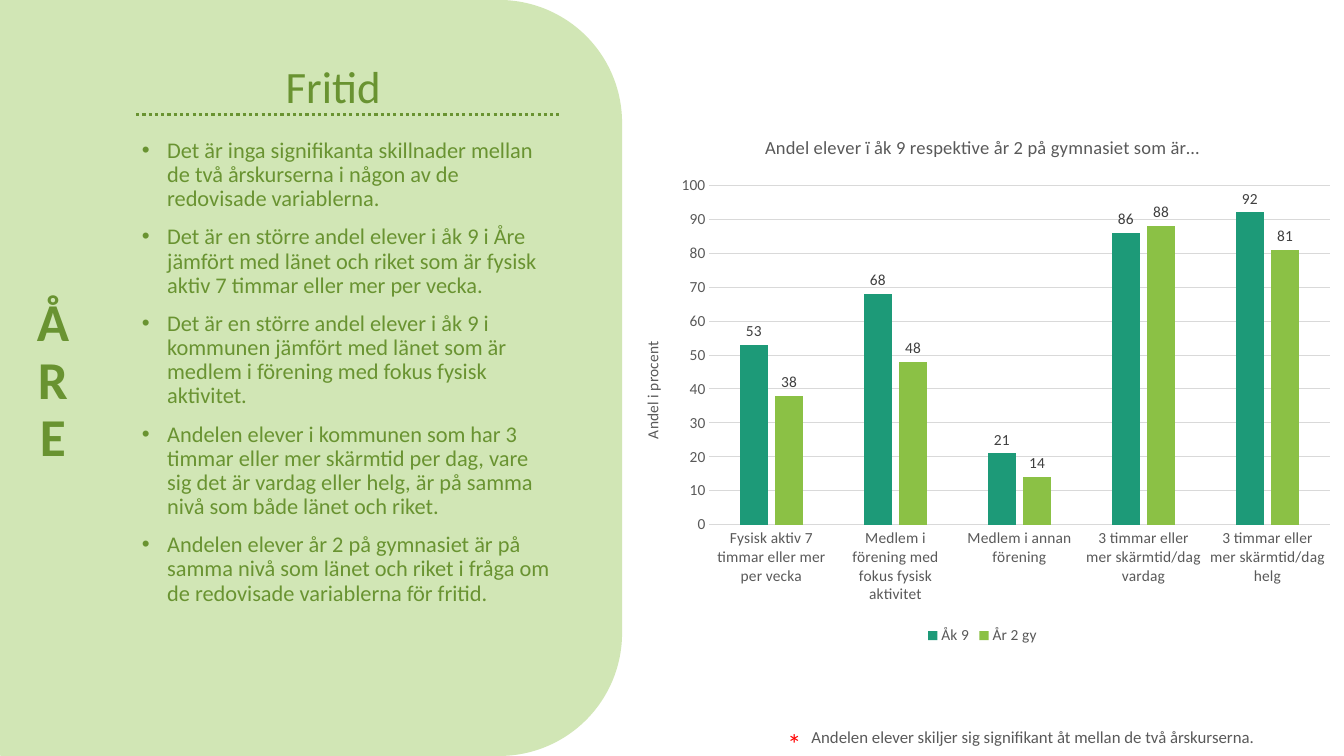
from lxml import etree
from pptx import Presentation
from pptx.chart.data import CategoryChartData
from pptx.dml.color import RGBColor
from pptx.enum.chart import XL_CHART_TYPE as ChartType, XL_LABEL_POSITION as LabelPosition
from pptx.enum.chart import XL_LEGEND_POSITION as LegendPosition, XL_TICK_MARK as TickMark
from pptx.enum.dml import MSO_LINE as LineDash
from pptx.enum.shapes import MSO_CONNECTOR as Connector, MSO_SHAPE as ShapeType
from pptx.enum.text import MSO_ANCHOR as Anchor, PP_ALIGN as Align
from pptx.oxml.ns import qn
from pptx.util import Inches, Pt

FONT = "Calibri"
PALE_GREEN = "D1E6B5"
DARK_GREEN = "699331"
GREY = "595959"
LIGHT_GREY = "D9D9D9"

FINDINGS = [
    "Det är inga signifikanta skillnader mellan de två årskurserna i någon av de redovisade variablerna.",
    "Det är en större andel elever i åk 9 i Åre jämfört med länet och riket som är fysisk aktiv 7 timmar "
    "eller mer per vecka.",
    "Det är en större andel elever i åk 9 i kommunen jämfört med länet som är medlem i förening med fokus "
    "fysisk aktivitet.",
    "Andelen elever i kommunen som har 3 timmar eller mer skärmtid per dag, vare sig det är vardag eller "
    "helg, är på samma nivå som både länet och riket.",
    "Andelen elever år 2 på gymnasiet är på samma nivå som länet och riket i fråga om de redovisade "
    "variablerna för fritid.",
]
ACTIVITIES = [
    "Fysisk aktiv 7 timmar eller mer per vecka",
    "Medlem i förening med fokus fysisk aktivitet",
    "Medlem i annan förening",
    "3 timmar eller mer skärmtid/dag vardag",
    "3 timmar eller mer skärmtid/dag helg",
]
SERIES = [
    ("Åk 9", (53, 68, 21, 86, 92), "1D9A78"),
    ("År 2 gy", (38, 48, 14, 88, 81), "8BC145"),
]


def color(hex_string):
    return RGBColor.from_string(hex_string)


def style_font(font, size, hex_string, bold=False):
    font.name = FONT
    font.size = Pt(size)
    font.bold = bold
    font.color.rgb = color(hex_string)


def add_panel(slide, shape_type, left, top, width, height):
    panel = slide.shapes.add_shape(shape_type, Inches(left), Inches(top), Inches(width), Inches(height))
    panel.shadow.inherit = False
    panel.fill.solid()
    panel.fill.fore_color.rgb = color(PALE_GREEN)
    panel.line.fill.background()
    return panel


def add_text(slide, text, left, top, width, height, size, hex_string,
             align=Align.LEFT, anchor=Anchor.TOP, bold=False, line_spacing=1.0):
    box = slide.shapes.add_textbox(Inches(left), Inches(top), Inches(width), Inches(height))
    frame = box.text_frame
    frame.word_wrap = True
    frame.vertical_anchor = anchor
    frame.text = text
    paragraph = frame.paragraphs[0]
    paragraph.alignment = align
    paragraph.line_spacing = line_spacing
    style_font(paragraph.runs[0].font, size, hex_string, bold)
    return box


def stack_letters(box):
    """Set the text upright, one letter below the other."""
    box.text_frame._txBody.bodyPr.set("vert", "wordArtVert")


def add_bullet(paragraph):
    properties = paragraph._p.get_or_add_pPr()
    properties.set("marL", str(Inches(0.25)))
    properties.set("indent", str(Inches(-0.25)))
    etree.SubElement(properties, qn("a:buFont")).set("typeface", "Arial")
    etree.SubElement(properties, qn("a:buChar")).set("char", "•")


def fill_bullets(shape, texts):
    frame = shape.text_frame
    frame.word_wrap = True
    frame.vertical_anchor = Anchor.TOP
    frame.text = "\n".join(texts)
    for paragraph in frame.paragraphs:
        paragraph.alignment = Align.LEFT
        paragraph.line_spacing = 0.9
        paragraph.space_before = Pt(10)
        add_bullet(paragraph)
        style_font(paragraph.runs[0].font, 16, DARK_GREEN)


def add_dotted_rule(slide, left, right, y):
    rule = slide.shapes.add_connector(Connector.STRAIGHT, Inches(left), Inches(y), Inches(right), Inches(y))
    rule.line.color.rgb = color(DARK_GREEN)
    rule.line.width = Pt(2.25)
    rule.line.dash_style = LineDash.ROUND_DOT
    etree.SubElement(rule._element.spPr, qn("a:effectLst"))


def set_title(titled, text, size):
    """Title a chart or an axis."""
    frame = (titled.chart_title if hasattr(titled, "chart_title") else titled.axis_title).text_frame
    frame.text = text
    style_font(frame.paragraphs[0].runs[0].font, size, GREY)


def style_axes(chart):
    for axis in (chart.category_axis, chart.value_axis):
        axis.major_tick_mark = axis.minor_tick_mark = TickMark.NONE
        style_font(axis.tick_labels.font, 11, GREY)
    category_line = chart.category_axis.format.line
    value_axis = chart.value_axis
    value_axis.minimum_scale, value_axis.maximum_scale, value_axis.major_unit = 0, 100, 10
    value_axis.tick_labels.number_format = "0"
    value_axis.tick_labels.number_format_is_linked = False
    value_axis.format.line.fill.background()
    for line in (category_line, value_axis.major_gridlines.format.line):
        line.color.rgb = color(LIGHT_GREY)
        line.width = Pt(0.75)
    set_title(value_axis, "Andel i procent", 11)


def style_series(series, hex_string):
    series.format.fill.solid()
    series.format.fill.fore_color.rgb = color(hex_string)
    labels = series.data_labels
    labels.show_value = True
    labels.position = LabelPosition.OUTSIDE_END
    labels.number_format = "0"
    labels.number_format_is_linked = False
    style_font(labels.font, 11, "404040")


def add_activity_chart(slide, left, top, width, height):
    data = CategoryChartData(number_format="0")
    data.categories = ACTIVITIES
    for name, values, _ in SERIES:
        data.add_series(name, values)
    chart = slide.shapes.add_chart(ChartType.COLUMN_CLUSTERED, Inches(left), Inches(top),
                                   Inches(width), Inches(height), data).chart
    style_font(chart.font, 11, "000000")
    set_title(chart, "Andel elever ï åk 9 respektive år 2 på gymnasiet som är…", 13.2)
    style_axes(chart)
    plot = chart.plots[0]
    plot.vary_by_categories = False
    plot.gap_width = 219
    plot.overlap = -27
    for series, (_, _, hex_string) in zip(plot.series, SERIES):
        style_series(series, hex_string)
    chart.has_legend = True
    chart.legend.position = LegendPosition.BOTTOM
    chart.legend.include_in_layout = False
    style_font(chart.legend.font, 11, GREY)


def main():
    presentation = Presentation()
    presentation.slide_width = Inches(13.33)
    presentation.slide_height = Inches(7.5)
    slide = presentation.slides.add_slide(presentation.slide_layouts[6])

    add_panel(slide, ShapeType.ROUNDED_RECTANGLE, -1.14, 0, 7.31, 7.5)
    add_text(slide, "Fritid", 0.94, 0.44, 4.73, 0.89, 32, DARK_GREEN,
             Align.CENTER, Anchor.MIDDLE, line_spacing=0.9)
    municipality = add_text(slide, "ÅRE", 0, 0.14, 1.05, 7.3, 38, DARK_GREEN,
                            Align.CENTER, Anchor.BOTTOM, bold=True, line_spacing=0.9)
    stack_letters(municipality)
    findings = add_panel(slide, ShapeType.RECTANGLE, 1.31, 1.33, 4.25, 5.59)
    fill_bullets(findings, FINDINGS)

    add_activity_chart(slide, 6.16, 1.14, 7.17, 5.3)
    add_dotted_rule(slide, 1.35, 5.56, 1.14)
    add_text(slide, "*", 7.71, 7.16, 0.48, 0.69, 20, "FF0000")
    add_text(slide, "Andelen elever skiljer sig signifikant åt mellan de två årskurserna.",
             7.95, 7.16, 4.71, 0.3, 12, GREY)

    presentation.save("out.pptx")


if __name__ == "__main__":
    main()
